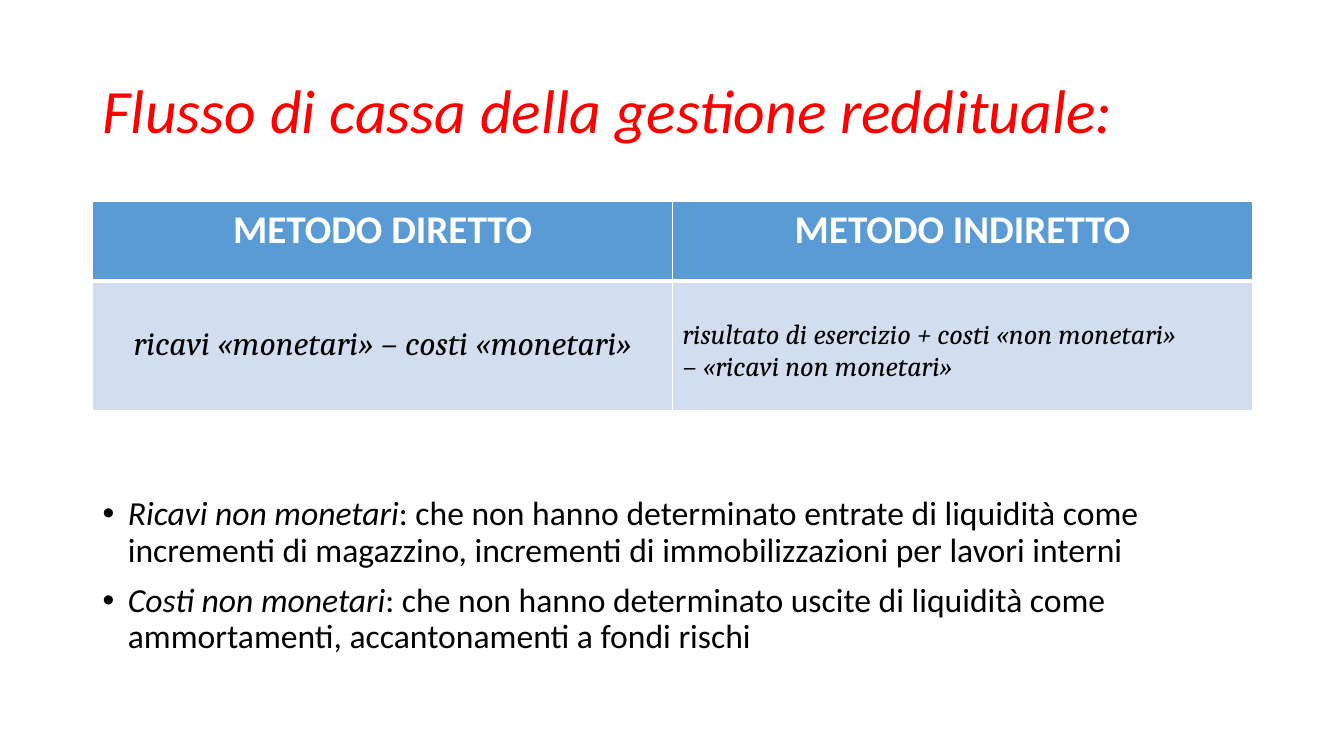
from dataclasses import dataclass

from lxml import etree
from pptx import Presentation
from pptx import util as u
from pptx.dml.color import RGBColor
from pptx.enum import text
from pptx.oxml import ns


@dataclass(frozen=True)
class Theme:
    """Colours, fonts and type sizes."""
    red: str = "FF0000"
    black: str = "000000"
    white: str = "FFFFFF"
    header_fill: str = "5B9BD5"
    body_fill: str = "D2DEEF"
    sans: str = "Calibri"
    serif: str = "Cambria"
    title_size: int = 44
    header_size: int = 28
    text_size: int = 24
    small_size: int = 20


def apply(target, values):
    """Set each named attribute on the target."""
    for name, value in values.items():
        setattr(target, name, value)


class PageBuilder:
    """Adds styled elements to the current slide."""

    def __init__(self, page, theme):
        """Keep the slide and its theme."""
        self.page = page
        self.theme = theme

    def add_span(self, para, content, size, color, face=None, **style):
        """Append one formatted span to a paragraph."""
        span = para.add_run()
        span.text = content
        apply(span.font, {"size": u.Pt(size), "name": face or self.theme.sans, **style})
        span.font.color.rgb = RGBColor.from_string(color)

    def text_frame(self, left, top, width, height, anchor):
        """Add a wrapping text box and return its frame."""
        box = self.page.shapes.add_textbox(*map(u.Inches, (left, top, width, height)))
        apply(box.text_frame, {"word_wrap": True, "vertical_anchor": anchor})
        return box.text_frame

    def title(self, content, *place):
        """Add the slide title."""
        para = self.text_frame(*place, text.MSO_ANCHOR.MIDDLE).paragraphs[0]
        para.line_spacing = 0.9
        self.add_span(para, content, self.theme.title_size, self.theme.red, italic=True)

    def bullets(self, entries, *place):
        """Add bulleted definitions, each with an italic term."""
        frame = self.text_frame(*place, text.MSO_ANCHOR.TOP)
        for index, (term, meaning) in enumerate(entries):
            para = frame.add_paragraph() if index else frame.paragraphs[0]
            apply(para, {"line_spacing": 0.9, "space_before": u.Pt(10)})
            properties = para._p.get_or_add_pPr()
            properties.set("marL", str(u.Inches(0.25)))
            properties.set("indent", str(u.Inches(-0.25)))
            etree.SubElement(properties, ns.qn("a:buFont")).set("typeface", "Arial")
            etree.SubElement(properties, ns.qn("a:buChar")).set("char", "•")
            for content, italic in ((term, True), (meaning, False)):
                self.add_span(para, content, self.theme.text_size, self.theme.black, italic=italic)

    def border(self, cell, **widths):
        """Draw white cell borders of the given widths."""
        properties = cell._tc.get_or_add_tcPr()
        for position, (side, width) in enumerate(widths.items()):
            line = etree.Element(ns.qn(f"a:ln{side}"), w=str(u.Pt(width)))
            fill = etree.SubElement(line, ns.qn("a:solidFill"))
            etree.SubElement(fill, ns.qn("a:srgbClr")).set("val", self.theme.white)
            properties.insert(position, line)

    def cell(self, cell, lines, fill, align, size, color, **style):
        """Fill one table cell with lines of text."""
        cell.fill.solid()
        cell.fill.fore_color.rgb = RGBColor.from_string(fill)
        for index, content in enumerate(lines):
            para = cell.text_frame.add_paragraph() if index else cell.text_frame.paragraphs[0]
            para.alignment = align
            self.add_span(para, content, size, color, **style)

    def methods_table(self, headers, formulas, row_heights, left, top, width):
        """Add the table that compares the methods."""
        theme = self.theme
        place = map(u.Inches, (left, top, width, sum(row_heights)))
        table = self.page.shapes.add_table(2, len(headers), *place).table
        for row, height in zip(table.rows, row_heights):
            row.height = u.Inches(height)
        for column, (header, formula) in enumerate(zip(headers, formulas)):
            lines, align, size = formula
            head, body = table.cell(0, column), table.cell(1, column)
            self.cell(head, [header], theme.header_fill, text.PP_ALIGN.CENTER,
                      theme.header_size, theme.white, bold=True)
            self.cell(body, lines, theme.body_fill, align, size, theme.black,
                      face=theme.serif, bold=False, italic=True)
            body.margin_top = u.Inches(0.05) + u.Pt(size * 1.17)
            self.border(head, L=1, R=1, T=1, B=3)
            self.border(body, L=1, R=1, T=3, B=1)


def main():
    """Build and save the deck."""
    deck = Presentation()
    apply(deck, {"slide_width": u.Inches(13.33), "slide_height": u.Inches(7.5)})
    theme = Theme()
    builder = PageBuilder(deck.slides.add_slide(deck.slide_layouts[6]), theme)
    left, width = 0.92, 11.5
    builder.title("Flusso di cassa della gestione reddituale:", left, 0.4, width, 1.45)
    builder.bullets([
        ("Ricavi non monetari", ": che non hanno determinato entrate di liquidità come "
         "incrementi di magazzino, incrementi di immobilizzazioni per lavori interni"),
        ("Costi non monetari", ": che non hanno determinato uscite di liquidità come "
         "ammortamenti, accantonamenti a fondi rischi"),
    ], left, 4.88, width, 1.87)
    builder.methods_table(
        ["METODO DIRETTO", "METODO INDIRETTO"],
        [(["ricavi «monetari» – costi «monetari»"], text.PP_ALIGN.CENTER, theme.text_size),
         (["risultato di esercizio + costi «non monetari»", "– «ricavi non monetari»"],
          text.PP_ALIGN.LEFT, theme.small_size)],
        (0.79, 1.28), left, 2, width)
    deck.save("out.pptx")


if __name__ == "__main__":
    main()
